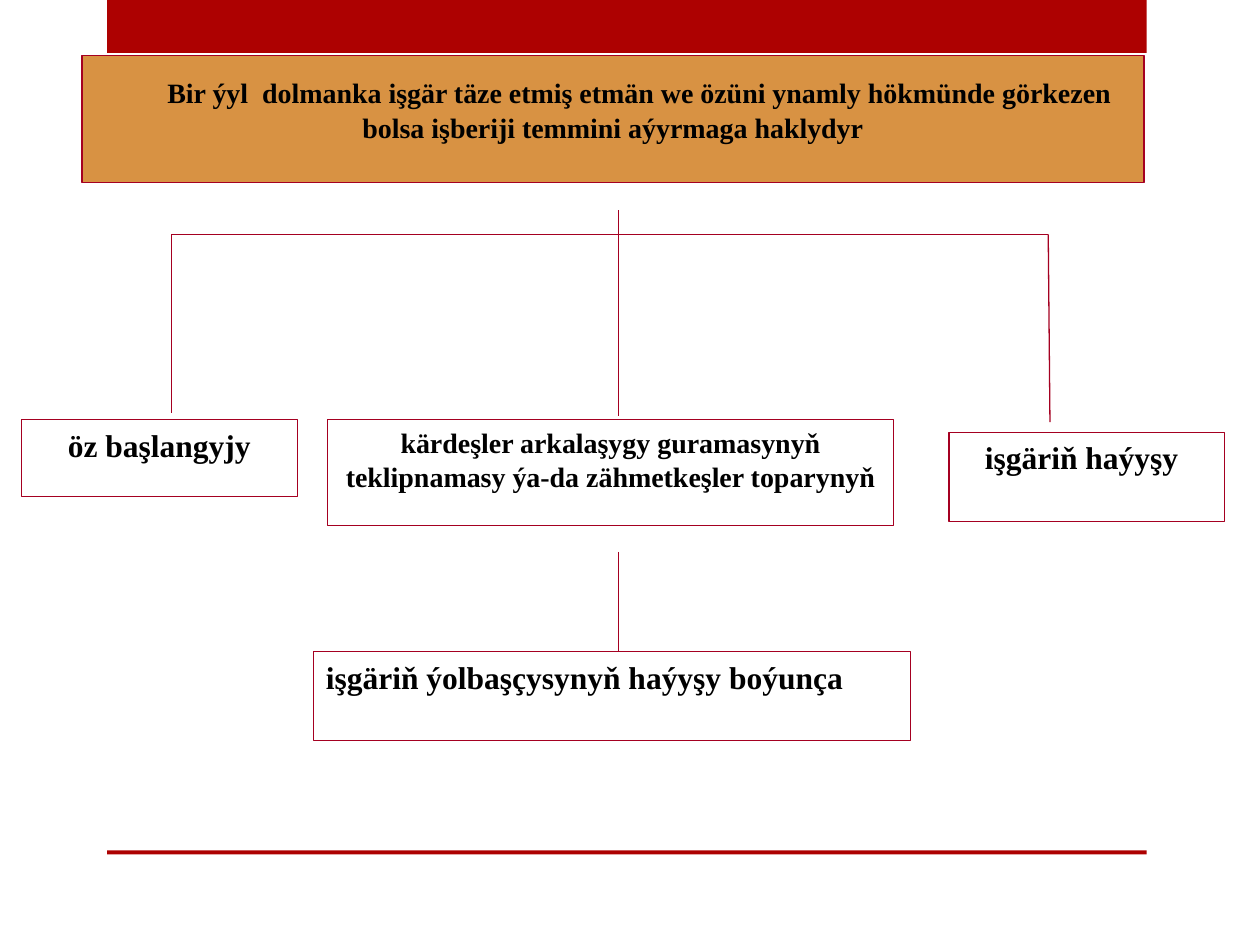
from dataclasses import dataclass

from lxml.etree import SubElement
from pptx import Presentation
from pptx.dml.color import RGBColor
from pptx.enum.shapes import MSO_CONNECTOR, MSO_SHAPE
from pptx.enum.text import MSO_ANCHOR, PP_ALIGN
from pptx.oxml.ns import qn
from pptx.util import Pt


@dataclass(frozen=True)
class Theme:
    font: str = "Times New Roman"
    text: RGBColor = RGBColor(0x00, 0x00, 0x00)
    band: RGBColor = RGBColor(0xAD, 0x01, 0x01)
    outline: RGBColor = RGBColor(0xA5, 0x00, 0x21)
    heading_fill: RGBColor = RGBColor(0xD8, 0x92, 0x43)
    small: int = 16
    large: int = 18
    line_width: float = 0.75


THEME = Theme()


def set_outline(item):
    item.line.color.rgb = THEME.outline
    item.line.width = Pt(THEME.line_width)


def write_text(frame, text, size, align, indent=0, top_inset=3.6):
    """Write one bold paragraph, with its first line indented in points."""
    frame.word_wrap = True
    frame.vertical_anchor = MSO_ANCHOR.TOP
    frame.margin_top = Pt(top_inset)
    paragraph = frame.paragraphs[0]
    paragraph.alignment = align
    if indent:
        paragraph._p.get_or_add_pPr().set("indent", str(Pt(indent)))
    run = paragraph.add_run()
    run.text = text
    run.font.name = THEME.font
    run.font.size = Pt(size)
    run.font.bold = True
    run.font.color.rgb = THEME.text
    return paragraph


def add_band(slide, top, height):
    band = slide.shapes.add_shape(
        MSO_SHAPE.RECTANGLE, Pt(61.2), Pt(top), Pt(594), Pt(height))
    band.shadow.inherit = False
    band.fill.solid()
    band.fill.fore_color.rgb = THEME.band
    band.line.fill.background()


def format_heading(heading, text):
    heading.left, heading.top = Pt(46.8), Pt(31.8)
    heading.width, heading.height = Pt(607), Pt(72.6)
    outline = SubElement(heading._element.spPr, qn("a:prstGeom"), prst="roundRect")
    SubElement(outline, qn("a:avLst"))
    heading.fill.solid()
    heading.fill.fore_color.rgb = THEME.heading_fill
    set_outline(heading)
    paragraph = write_text(heading.text_frame, text, THEME.small,
                           PP_ALIGN.CENTER, indent=30, top_inset=10.8)
    paragraph.line_spacing = Pt(20)


def add_box(slide, bounds, text, size, align, indent=0):
    box = slide.shapes.add_shape(MSO_SHAPE.RECTANGLE, *map(Pt, bounds))
    box.shadow.inherit = False
    box.fill.background()
    set_outline(box)
    write_text(box.text_frame, text, size, align, indent)


def add_line(slide, start, end):
    line = slide.shapes.add_connector(
        MSO_CONNECTOR.STRAIGHT, *map(Pt, start + end))
    set_outline(line)
    SubElement(line._element.spPr, qn("a:effectLst"))


def main():
    deck = Presentation()
    deck.slide_width, deck.slide_height = Pt(720), Pt(540)
    slide = deck.slides.add_slide(deck.slide_layouts[5])

    # Bands at the top and bottom
    add_band(slide, 0, 30.2)
    add_band(slide, 486, 2.2)

    # Condition
    format_heading(
        slide.shapes.title,
        "Bir ýyl  dolmanka işgär täze etmiş etmän we özüni ynamly hökmünde "
        "görkezen bolsa işberiji temmini aýyrmaga haklydyr")

    # Branches
    left, middle, right, rail = 97.9, 353.5, 599, 133.9
    add_line(slide, (left, rail), (right, rail))
    add_line(slide, (left, rail), (left, 236.2))
    add_line(slide, (middle, 120.2), (middle, 237.6))
    add_line(slide, (right, rail), (600, 241.2))
    add_line(slide, (middle, 315.4), (middle, 372.2))

    # Who may ask for it
    for bounds, text, size, align, indent in (
        ((12.2, 239.8, 157.7, 43.9), "öz başlangyjy",
         THEME.large, PP_ALIGN.CENTER, 0),
        ((187.2, 239.8, 323.3, 60.5),
         "kärdeşler arkalaşygy guramasynyň teklipnamasy ýa-da "
         "zähmetkeşler toparynyň",
         THEME.small, PP_ALIGN.CENTER, 0),
        ((542.2, 247, 157.7, 51.1), "işgäriň haýyşy",
         THEME.large, PP_ALIGN.LEFT, 13.5),
        ((179.2, 372.2, 341.3, 51.1), "işgäriň ýolbaşçysynyň haýyşy boýunça",
         THEME.large, PP_ALIGN.LEFT, 0),
    ):
        add_box(slide, bounds, text, size, align, indent)

    deck.save("out.pptx")


if __name__ == "__main__":
    main()
